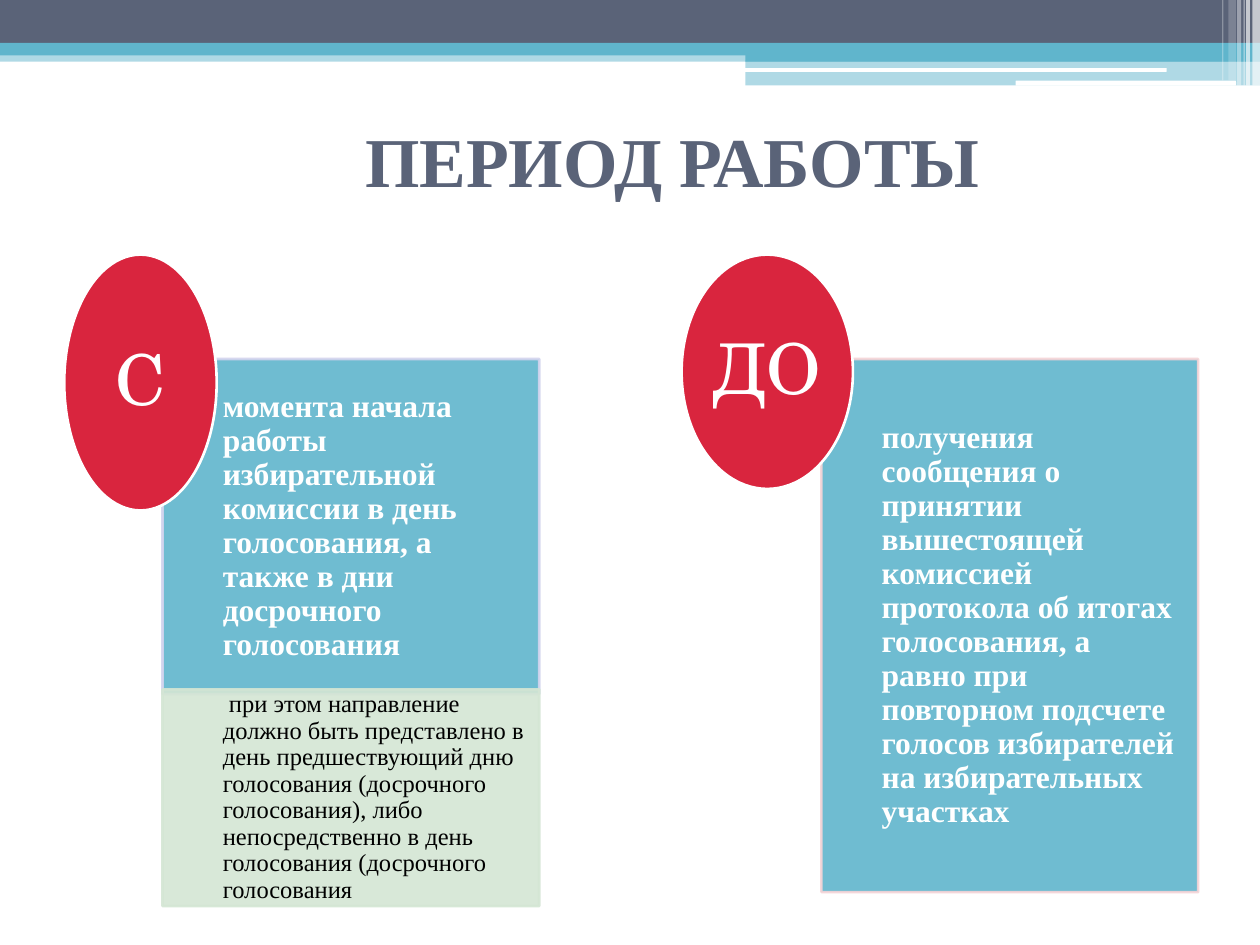
import dataclasses
import math

import lxml.etree
import pptx
import pptx.dml.color
import pptx.enum.shapes
import pptx.enum.text
import pptx.oxml.ns
import pptx.util

Pt = pptx.util.Pt
SHAPES = pptx.enum.shapes.MSO_SHAPE
ALIGN = pptx.enum.text.PP_ALIGN


@dataclasses.dataclass(frozen=True)
class Theme:
    slate: str = "5A6378"
    teal: str = "60B5CC"
    red: str = "D9253E"
    green: str = "D4E6D4"
    pink_edge: str = "F5D4D7"
    lilac_edge: str = "D3D4EE"
    white: str = "FFFFFF"
    black: str = "000000"
    body_font: str = "Times New Roman"
    badge_font: str = "TeX Gyre Schola"
    display_size: int = 40
    body_size: int = 18
    note_size: int = 14
    edge_width: float = 1.5


class SlideBuilder:
    def __init__(self, slide, theme):
        self.slide = slide
        self.theme = theme

    def color(self, target, value, opacity=100):
        target.solid()
        target.fore_color.rgb = pptx.dml.color.RGBColor.from_string(value)

    def fade(self, shape, opacity):
        if opacity < 100:
            for color in shape.element.spPr.iter(pptx.oxml.ns.qn("a:srgbClr")):
                alpha = lxml.etree.SubElement(color, pptx.oxml.ns.qn("a:alpha"))
                alpha.set("val", str(opacity * 1000))

    def block(self, box, fill, opacity=100, kind=SHAPES.RECTANGLE, edge=None):
        shape = self.slide.shapes.add_shape(kind, *map(Pt, box))
        shape.shadow.inherit = False
        self.color(shape.fill, fill)
        if edge:
            self.color(shape.line.fill, edge)
            shape.line.width = Pt(self.theme.edge_width)
        else:
            shape.line.fill.background()
        self.fade(shape, opacity)
        return shape

    def text(self, box, content, insets, font, paragraph_format):
        frame = self.slide.shapes.add_textbox(*map(Pt, box)).text_frame
        sides = ("margin_left", "margin_top", "margin_right", "margin_bottom")
        frame_format = dict(zip(sides, map(Pt, insets)))
        frame_format["word_wrap"] = True
        frame_format["vertical_anchor"] = pptx.enum.text.MSO_ANCHOR.MIDDLE
        paragraph = frame.paragraphs[0]
        run = paragraph.add_run()
        run.text = content
        font = dict(font)
        color = font.pop("color")
        for target, values in (
            (frame, frame_format),
            (paragraph, paragraph_format),
            (run.font, font),
        ):
            for name, value in values.items():
                setattr(target, name, value)
        self.color(run.font.fill, color)

    def title(self, box, content):
        theme = self.theme
        font = {"name": theme.body_font, "size": Pt(theme.display_size),
                "bold": True, "color": theme.slate}
        self.text(box, content, (7.2, 3.6, 7.2, 3.6), font, {"alignment": ALIGN.LEFT})

    def card(self, box, content, fill, edge, size, color, bold):
        self.block(box, fill, 90, edge=edge)
        left, top, width, height = box
        indent = 0.16 * width
        padding = 0.56 * size
        font = {"name": self.theme.body_font, "size": Pt(size), "bold": bold, "color": color}
        self.text((left + indent, top, width - indent, height), content,
                  (0, padding, padding, padding), font,
                  {"alignment": ALIGN.LEFT, "line_spacing": 0.9})

    def badge(self, box, content):
        theme = self.theme
        self.block(box, theme.red, kind=SHAPES.OVAL, edge=theme.white)
        left, top, width, height = box
        scale = math.sqrt(0.5)
        margin = (1 - scale) / 2
        inner = (left + margin * width, top + margin * height, scale * width, scale * height)
        font = {"name": theme.badge_font, "size": Pt(theme.display_size), "color": theme.white}
        self.text(inner, content, (0, 0, 0, 0), font,
                  {"alignment": ALIGN.CENTER, "line_spacing": 0.9})

    def header(self, slide_width):
        theme = self.theme
        for left, top, height, fill, opacity in (
            (0, 28.8, 6.5, theme.teal, 50),
            (0, 0, 24.5, theme.slate, 100),
            (0, 24.5, 7.2, theme.teal, 100),
            (426, 28, 7.2, theme.teal, 100),
            (426, 34.5, 14.4, theme.teal, 50),
        ):
            self.block((left, top, slide_width - left, height), fill, opacity)
        for box in ((425.5, 38.9, 241.2, 2.2), (580.3, 46.1, 126, 2.9)):
            self.block(box, theme.white, kind=SHAPES.ROUNDED_RECTANGLE)
        for left, width, height, opacity in (
            (715.7, 4.3, 49, 65),
            (712.1, 2.2, 49, 65),
            (710.6, 0.7, 49, 60),
            (707, 2.2, 49, 40),
            (702, 4.3, 46, 20),
            (698.4, 0.7, 46, 30),
        ):
            self.block((left, 0, width, height), theme.white, opacity)


def main():
    theme = Theme()
    presentation = pptx.Presentation()
    presentation.slide_width = Pt(720)
    presentation.slide_height = Pt(540)
    slide = presentation.slides.add_slide(presentation.slide_layouts[6])
    builder = SlideBuilder(slide, theme)

    builder.header(720)
    builder.title((201.6, 49, 488.2, 84.2), "ПЕРИОД РАБОТЫ")

    card_top, card_width = 205.2, 215.3
    start_left, end_left = 92.9, 469.4
    main_style = (theme.body_size, theme.white, True)
    builder.card(
        (end_left, card_top, card_width, 304.6),
        "получения сообщения о принятии вышестоящей комиссией протокола об итогах "
        "голосования, а равно при повторном подсчете голосов избирателей на "
        "избирательных участках",
        theme.teal, theme.pink_edge, *main_style)
    builder.badge((389.5, 145.5, 97.9, 133.9), "ДО")
    builder.card(
        (start_left, card_top, card_width, 191.5),
        "момента начала работы избирательной комиссии в день голосования, а также "
        "в дни досрочного голосования",
        theme.teal, theme.lilac_edge, *main_style)
    builder.card(
        (start_left, 393.9, card_width, 123.9),
        " при этом направление должно быть представлено в день предшествующий дню "
        "голосования (досрочного голосования), либо непосредственно в день "
        "голосования (досрочного голосования",
        theme.green, theme.green, theme.note_size, theme.black, False)
    builder.badge((36.7, 145.5, 87.1, 146.2), "С")

    presentation.save("out.pptx")


if __name__ == "__main__":
    main()
